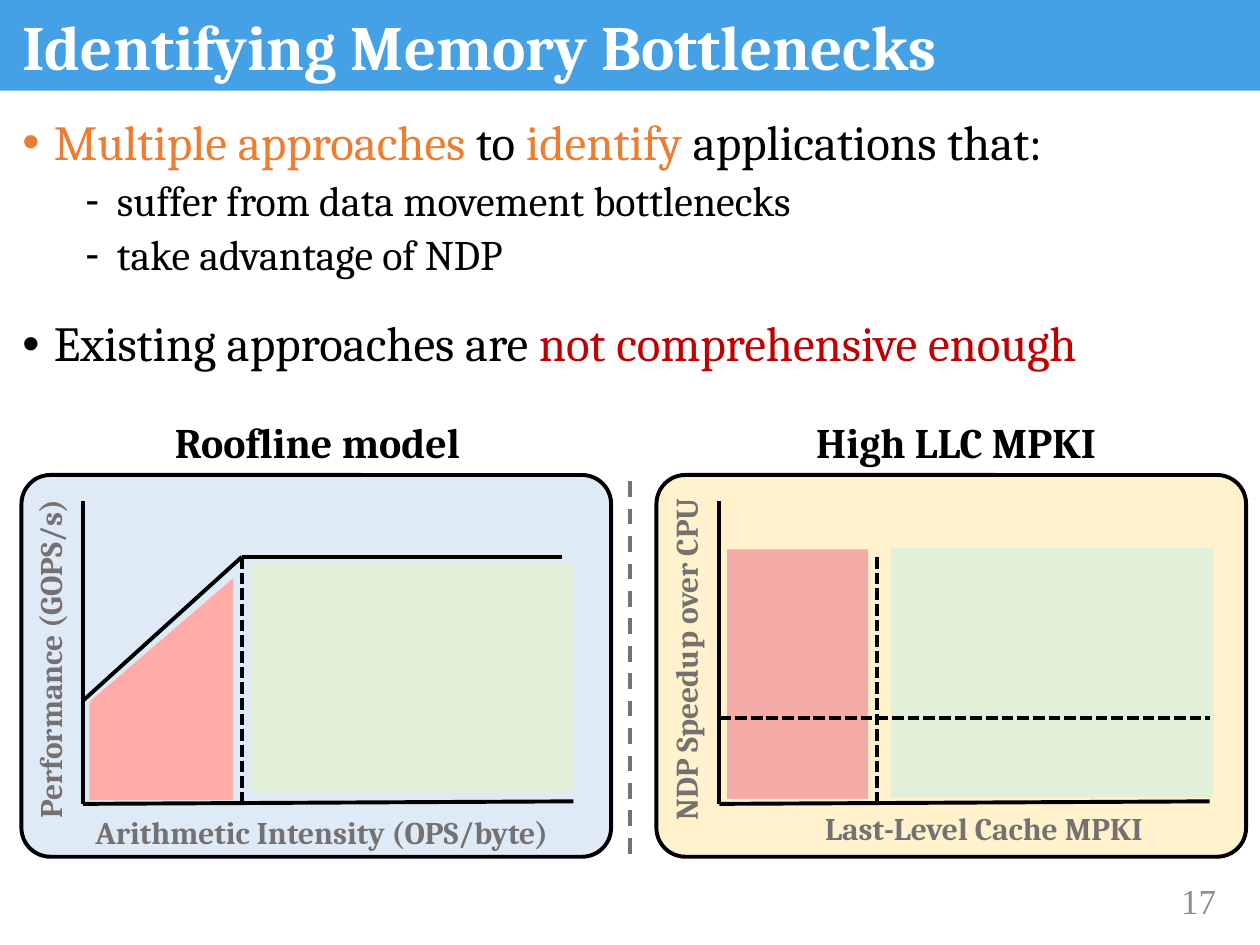
from lxml import etree
from pptx import Presentation
from pptx.dml.color import RGBColor
from pptx.enum.dml import MSO_LINE as Dash
from pptx.enum.shapes import MSO_CONNECTOR as Conn, MSO_SHAPE as Kind
from pptx.enum.text import MSO_ANCHOR as Anchor, MSO_AUTO_SIZE as Auto, PP_ALIGN as Align
from pptx.oxml.ns import qn
from pptx.util import Inches, Pt

BLACK = RGBColor(0x00, 0x00, 0x00)
WHITE = RGBColor(0xFF, 0xFF, 0xFF)
BLUE = RGBColor(0x45, 0xA1, 0xE6)
ORANGE = RGBColor(0xED, 0x7D, 0x31)
RED = RGBColor(0xC0, 0x00, 0x00)
GRAY = RGBColor(0x76, 0x71, 0x71)
SILVER = RGBColor(0x8C, 0x8C, 0x8C)
SKY = RGBColor(0xDE, 0xEB, 0xF7)
CREAM = RGBColor(0xFF, 0xF2, 0xCC)
GREEN = RGBColor(0xE2, 0xF0, 0xD9)
PINK = RGBColor(0xFF, 0xAC, 0xA9)
ROSE = RGBColor(0xF5, 0xAC, 0xA9)

prs = Presentation()
prs.slide_width, prs.slide_height = Inches(10), Inches(7.5)
slide = prs.slides.add_slide(prs.slide_layouts[6])
shapes = slide.shapes


def add_line(x1, y1, x2, y2, dash=None, color=BLACK):
    line = shapes.add_connector(Conn.STRAIGHT, *map(Inches, (x1, y1, x2, y2)))
    line.line.color.rgb = color
    line.line.width = Pt(2.25)
    if dash:
        line.line.dash_style = dash
    etree.SubElement(line._element.spPr, qn("a:effectLst"))


def add_label(text, box, size, color, turn=0, bold=True, face="Cambria"):
    """Add one line of text in a box that fits it; turn is in degrees."""
    label = shapes.add_textbox(*map(Inches, box))
    label.rotation = turn
    frame = label.text_frame
    frame.word_wrap = False
    frame.auto_size = Auto.SHAPE_TO_FIT_TEXT
    frame.text = text
    font = frame.paragraphs[0].runs[0].font
    font.name, font.size, font.bold = face, Pt(size), bold
    font.color.rgb = color
    return frame


# Title band
band = shapes.add_shape(Kind.RECTANGLE, 0, Inches(-0.03), Inches(10), Inches(0.75))
band.shadow.inherit = False
band.fill.solid()
band.fill.fore_color.rgb = BLUE
band.line.fill.background()
title = add_label("Identifying Memory Bottlenecks", (0.08, 0.08, 9.83, 0.81), 36, WHITE)
title.auto_size = Auto.NONE
title.word_wrap = True
title.paragraphs[0].line_spacing = 0.9

# Bullets: level, space before, runs
points = [
    (0, 0, [("Multiple approaches", ORANGE), (" to ", BLACK),
            ("identify", ORANGE), (" applications that:", BLACK)]),
    (1, 5, [("suffer from data movement bottlenecks", BLACK)]),
    (1, 5, [("take advantage of NDP", BLACK)]),
    (0, 23, [("Existing approaches are ", BLACK), ("not comprehensive enough", RED)]),
]
body = shapes.add_textbox(Inches(0.08), Inches(0.89), Inches(9.83), Inches(2.2)).text_frame
body.word_wrap = True
for i, (level, gap, runs) in enumerate(points):
    para = body.paragraphs[0] if i == 0 else body.add_paragraph()
    para.level = level
    para.line_spacing = 0.9
    para.space_before = Pt(gap)
    props = para._p.get_or_add_pPr()
    props.set("marL", str(Inches(0.25 + 0.5 * level)))
    props.set("indent", str(Inches(-0.25)))
    etree.SubElement(props, qn("a:buFont")).set("typeface", "Arial")
    etree.SubElement(props, qn("a:buChar")).set("char", "•-"[level])
    for text, color in runs:
        run = para.add_run()
        run.text = text
        run.font.name, run.font.size = "Cambria", Pt(28 - 4 * level)
        run.font.color.rgb = color

# Panels and plot areas
blocks = [
    (Kind.ROUNDED_RECTANGLE, (0.17, 3.77, 4.68, 3.03), SKY),
    (Kind.RECTANGLE, (1.99, 4.48, 2.56, 1.81), GREEN),
    (Kind.ROUNDED_RECTANGLE, (5.21, 3.77, 4.68, 3.03), CREAM),
    (Kind.RECTANGLE, (7.07, 4.35, 2.56, 1.98), GREEN),
    (Kind.RECTANGLE, (5.77, 4.36, 1.12, 1.98), ROSE),
]
for kind, box, color in blocks:
    block = shapes.add_shape(kind, *map(Inches, box))
    block.shadow.inherit = False
    block.fill.solid()
    block.fill.fore_color.rgb = color
    if kind == Kind.ROUNDED_RECTANGLE:
        block.adjustments[0] = 0.076
        block.line.color.rgb = BLACK
        block.line.width = Pt(2.25)
    else:
        block.line.fill.background()

pen = shapes.build_freeform(Inches(0.71), Inches(5.57))
corners = [(1.85, 4.59), (1.85, 6.35), (0.71, 6.35)]
pen.add_line_segments([(Inches(x), Inches(y)) for x, y in corners], close=True)
slope = pen.convert_to_shape()
slope.shadow.inherit = False
slope.fill.solid()
slope.fill.fore_color.rgb = PINK
slope.line.fill.background()

# Axes and thresholds
for left, split in [(0.66, 1.92), (5.71, 6.96)]:
    add_line(left, 3.98, left, 6.38)
    add_line(left, 6.38, left + 3.89, 6.36)
    add_line(split, 4.42, split, 6.37, Dash.SQUARE_DOT)
add_line(0.66, 5.56, 1.92, 4.42)
add_line(1.92, 4.42, 4.46, 4.42)
add_line(5.71, 5.7, 9.6, 5.7, Dash.SQUARE_DOT)
add_line(5, 3.82, 5, 6.78, Dash.DASH, GRAY)

add_label("Roofline model", (1.29, 3.26, 2.62, 0.5), 24, BLACK)
add_label("High LLC MPKI", (6.38, 3.26, 2.54, 0.5), 24, BLACK)
add_label("Arithmetic Intensity (OPS/byte)", (0.66, 6.4, 3.9, 0.4), 18, GRAY)
add_label("Last-Level Cache MPKI", (6.45, 6.37, 2.8, 0.4), 18, GRAY)
add_label("Performance (GOPS/s)", (-1.02, 4.98, 2.83, 0.4), 18, GRAY, 270)
add_label("NDP Speedup over CPU", (4.01, 4.98, 2.86, 0.4), 18, GRAY, 270)

number = add_label("17", (8.67, 6.95, 1.08, 0.4), 20, SILVER,
                   bold=False, face="Times New Roman")
number.auto_size = Auto.NONE
number.word_wrap = True
number.vertical_anchor = Anchor.MIDDLE
number.paragraphs[0].alignment = Align.RIGHT

prs.save("out.pptx")
